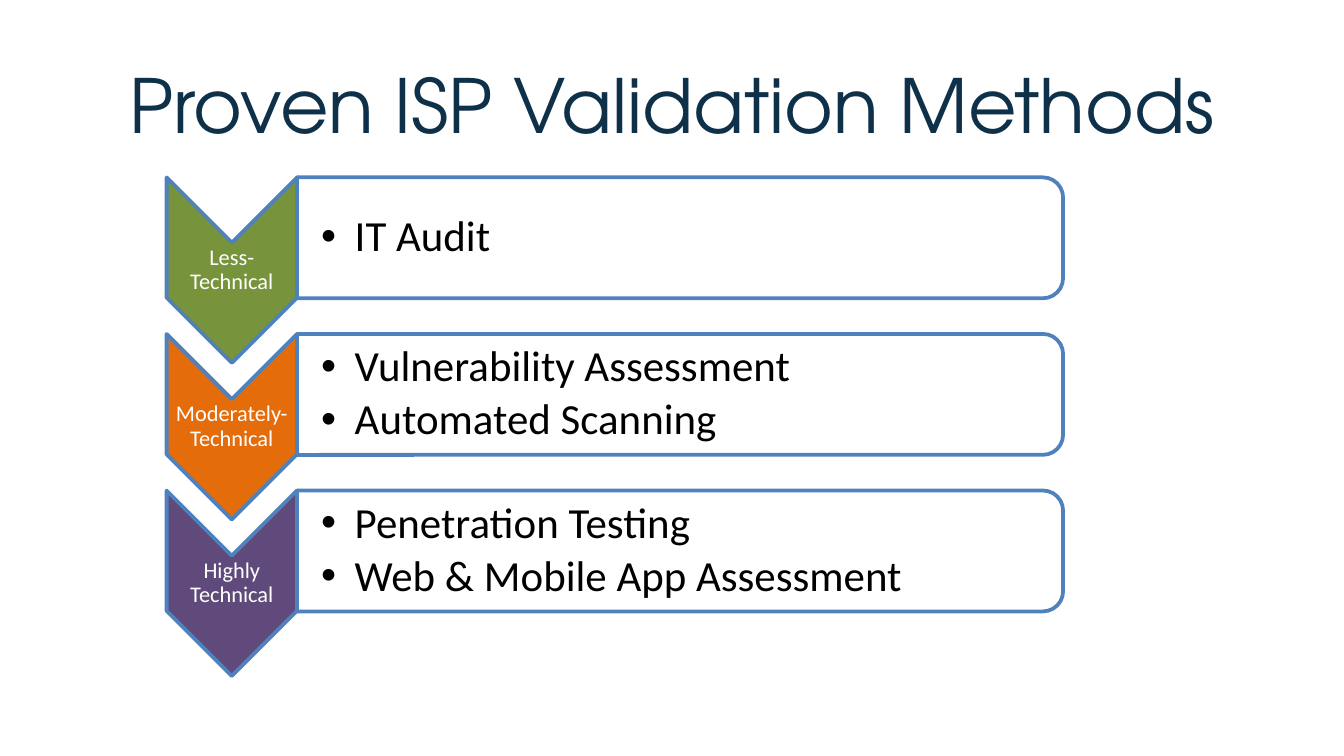
from lxml import etree
from pptx import Presentation
from pptx.dml.color import RGBColor
from pptx.enum.shapes import MSO_SHAPE
from pptx.enum.text import MSO_ANCHOR, PP_ALIGN
from pptx.oxml.ns import qn
from pptx.util import Inches, Pt

CHEVRON = MSO_SHAPE.CHEVRON
PANEL = MSO_SHAPE.ROUND_2_SAME_RECTANGLE
MIDDLE = MSO_ANCHOR.MIDDLE
CENTER, LEFT = PP_ALIGN.CENTER, PP_ALIGN.LEFT

TITLE = "Proven ISP Validation Methods"
LEVELS = [
    ("Less-Technical", "77933C", ["IT Audit"]),
    ("Moderately-Technical", "E46C0A",
     ["Vulnerability Assessment", "Automated Scanning"]),
    ("Highly Technical", "604A7B",
     ["Penetration Testing", "Web & Mobile App Assessment"]),
]
OUTLINE, WHITE, BLACK, NAVY = "4F81BD", "FFFFFF", "000000", "0F3049"

SLIDE_W = 10
SLIDE_H = SLIDE_W * 9 / 16
GRID_LEFT, GRID_TOP = 1.24, 1.32
ROW_PITCH = 2.33 / (len(LEVELS) - 1)
ARROW_W, ARROW_H = 0.97, 1.38
PANEL_W, PANEL_H = 5.7, 0.9
LABEL_H, METHODS_H = 0.41, 0.81
PANEL_LEFT = GRID_LEFT + ARROW_W


def rgb(hex_color):
    return RGBColor.from_string(hex_color)


def add_turned(kind, left, top, width, height, color):
    turned_left = left + (width - height) / 2
    turned_top = top + (height - width) / 2
    shape = slide.shapes.add_shape(
        kind, Inches(turned_left), Inches(turned_top), Inches(height), Inches(width))
    shape.rotation = 90
    shape.shadow.inherit = False
    shape.fill.solid()
    shape.fill.fore_color.rgb = rgb(color)
    shape.line.color.rgb = rgb(OUTLINE)
    shape.line.width = Pt(2)
    return shape


def set_opacity(shape, percent):
    color = shape.fill._xPr.find(qn("a:solidFill"))[0]
    etree.SubElement(color, qn("a:alpha"), val=str(percent * 1000))


def add_bullet(paragraph):
    properties = paragraph._p.get_or_add_pPr()
    properties.set("marL", str(Inches(0.25)))
    properties.set("indent", str(-Inches(0.25)))
    etree.SubElement(properties, qn("a:buFont"), typeface="Arial")
    etree.SubElement(properties, qn("a:buChar"), char="•")


def add_text(lines, left, top, width, height, size, color, font="Calibri",
             align=CENTER, inset=0.01, left_inset=0.01, spacing=0.9, bullets=False):
    box = slide.shapes.add_textbox(
        Inches(left), Inches(top), Inches(width), Inches(height))
    frame = box.text_frame
    frame.word_wrap = True
    frame.vertical_anchor = MIDDLE
    frame.margin_left = Inches(left_inset)
    frame.margin_top = frame.margin_right = frame.margin_bottom = Inches(inset)
    for index, line in enumerate(lines):
        paragraph = frame.add_paragraph() if index else frame.paragraphs[0]
        if bullets:
            add_bullet(paragraph)
            paragraph.space_after = Pt(3.45)
        paragraph.alignment = align
        paragraph.line_spacing = spacing
        run = paragraph.add_run()
        run.text = line
        run.font.name = font
        run.font.size = Pt(size)
        run.font.color.rgb = rgb(color)


prs = Presentation()
prs.slide_width, prs.slide_height = Inches(SLIDE_W), Inches(SLIDE_H)
slide = prs.slides.add_slide(prs.slide_layouts[6])

add_text([TITLE], 0.5, 0.37, SLIDE_W - 1, 0.8, 40, NAVY,
         font="TeX Gyre Adventor", spacing=1.0)

for row, (label, color, methods) in enumerate(LEVELS):
    top = GRID_TOP + row * ROW_PITCH
    add_turned(CHEVRON, GRID_LEFT, top, ARROW_W, ARROW_H, color)
    add_text([label], GRID_LEFT, top + (ARROW_H - LABEL_H) / 2,
             ARROW_W, LABEL_H, 12, WHITE)
    panel = add_turned(PANEL, PANEL_LEFT, top, PANEL_W, PANEL_H, WHITE)
    set_opacity(panel, 90)
    add_text(methods, PANEL_LEFT, top + (PANEL_H - METHODS_H) / 2,
             PANEL_W - 0.04, METHODS_H, 23, BLACK, align=LEFT,
             inset=0.02, left_inset=0.18, bullets=True)

prs.save("out.pptx")
